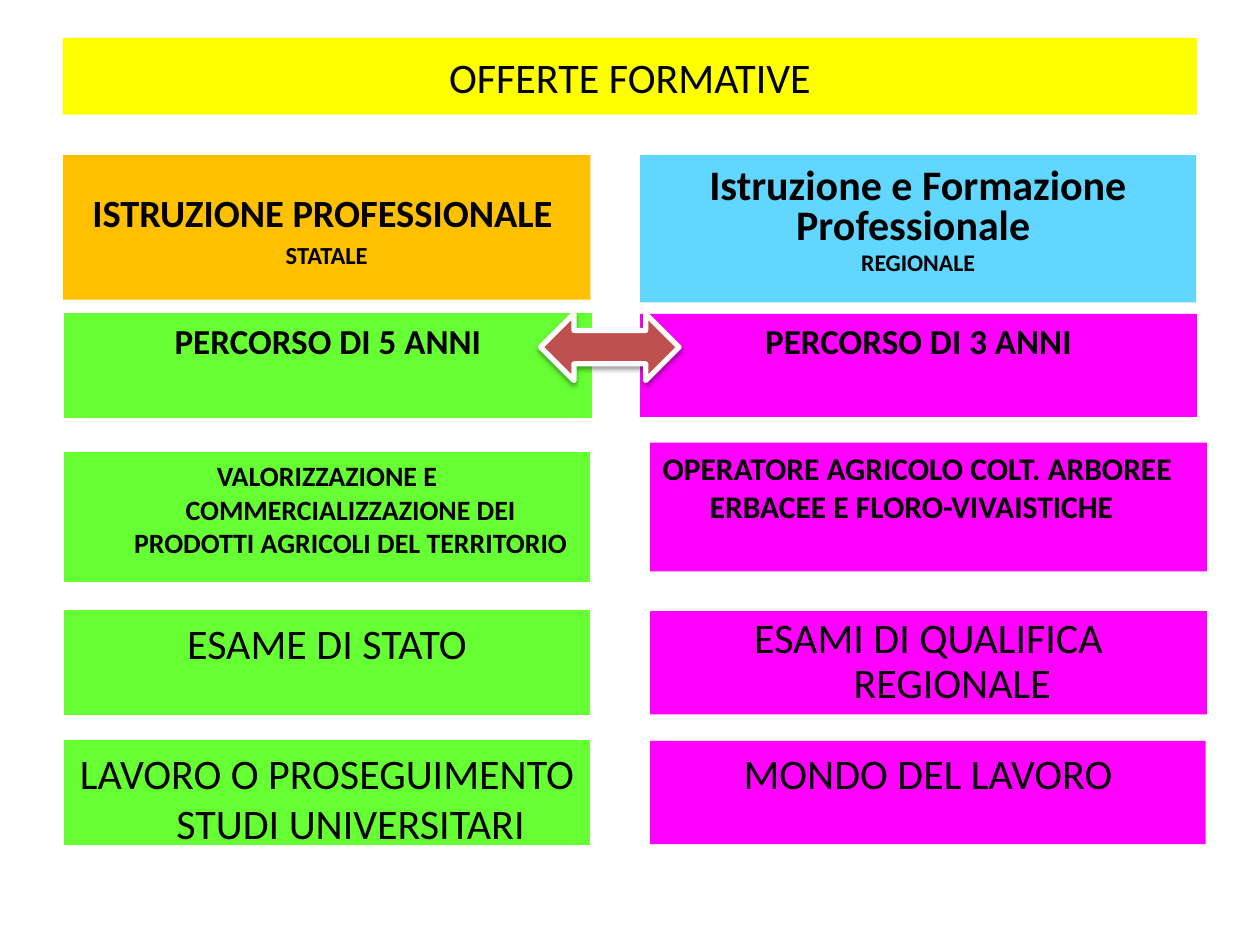
import pptx
import pptx.util
import pptx.dml.color
import pptx.enum.shapes
import pptx.enum.text
import pptx.oxml
import pptx.oxml.ns

Pt = pptx.util.Pt
Shape = pptx.enum.shapes.MSO_SHAPE
Align = pptx.enum.text.PP_ALIGN
Anchor = pptx.enum.text.MSO_ANCHOR

YELLOW, ORANGE, BLUE = "FFFF00", "FFC000", "61D6FF"
GREEN, PINK, RED = "66FF33", "FF00FF", "C0504D"

# Headings: place, fill, (text, size) lines, bold, line spacing, anchor, bottom inset
HEADS = [
    ((36, 21.6, 648, 44), YELLOW, [("OFFERTE FORMATIVE", 24)],
     False, 1, Anchor.MIDDLE, 3.6),
    ((36, 88.6, 301.4, 82.6), ORANGE,
     [("ISTRUZIONE PROFESSIONALE ", 22), ("STATALE", 14)],
     True, 1, Anchor.BOTTOM, 17.2),
    ((365.8, 88.6, 317.5, 84.2), BLUE,
     [("Istruzione e Formazione Professionale ", 24), ("REGIONALE", 13.6)],
     True, 0.8, Anchor.BOTTOM, 15),
]

# Steps of each path: text, size, bold, alignment, line spacing
STATE = [
    ("PERCORSO DI 5 ANNI", 20, True, Align.CENTER, 1),
    ("VALORIZZAZIONE E COMMERCIALIZZAZIONE DEI PRODOTTI AGRICOLI DEL TERRITORIO",
     16, True, Align.CENTER, 1),
    ("ESAME DI STATO", 24, False, Align.CENTER, 1),
    ("LAVORO O PROSEGUIMENTO STUDI UNIVERSITARI", 24, False, Align.CENTER, 1),
]
REGION = [
    ("PERCORSO DI 3 ANNI", 20, True, Align.CENTER, 1),
    ("OPERATORE AGRICOLO COLT. ARBOREE ERBACEE E FLORO-VIVAISTICHE",
     18, True, Align.LEFT, 1),
    ("ESAMI DI QUALIFICA REGIONALE", 24, False, Align.CENTER, 0.9),
    ("MONDO DEL LAVORO", 24, False, Align.CENTER, 1),
]

# Columns: steps, fill, outlined, lefts, widths, tops
COLS = [
    (STATE, GREEN, True, [36.7] * 4, [301.4, 300.3, 300.3, 300.3],
     [179.3, 258.5, 349.2, 423.4]),
    (REGION, PINK, False, [365.8] + [371.5] * 3, [318.2] * 3 + [317.5],
     [179.3, 252.9, 349.2, 423.4]),
]
HEIGHTS = [59, 73.6, 59, 59]
HANG = 27

deck = pptx.Presentation()
deck.slide_width, deck.slide_height = Pt(720), Pt(540)
slide = deck.slides.add_slide(deck.slide_layouts[6])


def color(text):
    return pptx.dml.color.RGBColor.from_string(text)


def block(kind, place, fill, line=None, width=0.75):
    shape = slide.shapes.add_shape(kind, *[Pt(v) for v in place])
    shape.shadow.inherit = False
    shape.fill.solid()
    shape.fill.fore_color.rgb = color(fill)
    if line:
        shape.line.color.rgb = color(line)
        shape.line.width = Pt(width)
    else:
        shape.line.fill.background()
    return shape


def write(shape, lines, bold, align, gap, anchor, hang=0):
    frame = shape.text_frame
    frame.word_wrap = True
    frame.vertical_anchor = anchor
    for i, (text, size) in enumerate(lines):
        para = frame.add_paragraph() if i else frame.paragraphs[0]
        para.text = text
        para.alignment = align
        para.line_spacing = gap
        para.space_before = Pt(round(size * 0.2, 1))
        font = para.font
        font.name, font.size, font.bold = "Calibri", Pt(size), bold
        font.color.rgb = color("000000")
        if hang:
            props = para._p.get_or_add_pPr()
            props.set("marL", str(Pt(hang)))
            props.set("indent", str(-Pt(hang)))


# Title and column headings
for place, fill, lines, bold, gap, anchor, inset in HEADS:
    head = block(Shape.RECTANGLE, place, fill)
    write(head, lines, bold, Align.CENTER, gap, anchor)
    head.text_frame.margin_bottom = Pt(inset)

# Steps of the two paths
for steps, fill, edge, lefts, widths, tops in COLS:
    for step, *place in zip(steps, lefts, tops, widths, HEIGHTS):
        text, size, bold, align, gap = step
        box = block(Shape.RECTANGLE, place, fill, fill if edge else None)
        write(box, [(text, size)], bold, align, gap, Anchor.TOP, HANG)

# Double arrow between the paths, with a soft shadow below
arrow = block(Shape.LEFT_RIGHT_ARROW, (308.9, 179.3, 79.2, 38.2), RED, "FFFFFF", 3)
effects = arrow._element.spPr.find(pptx.oxml.ns.qn("a:effectLst"))
effects.append(pptx.oxml.parse_xml(
    f'<a:outerShdw {pptx.oxml.ns.nsdecls("a")} blurRad="{Pt(3.1)}" '
    f'dist="{Pt(1.6)}" dir="5400000" rotWithShape="0">'
    '<a:srgbClr val="000000"><a:alpha val="38000"/></a:srgbClr></a:outerShdw>'))

deck.save("out.pptx")
